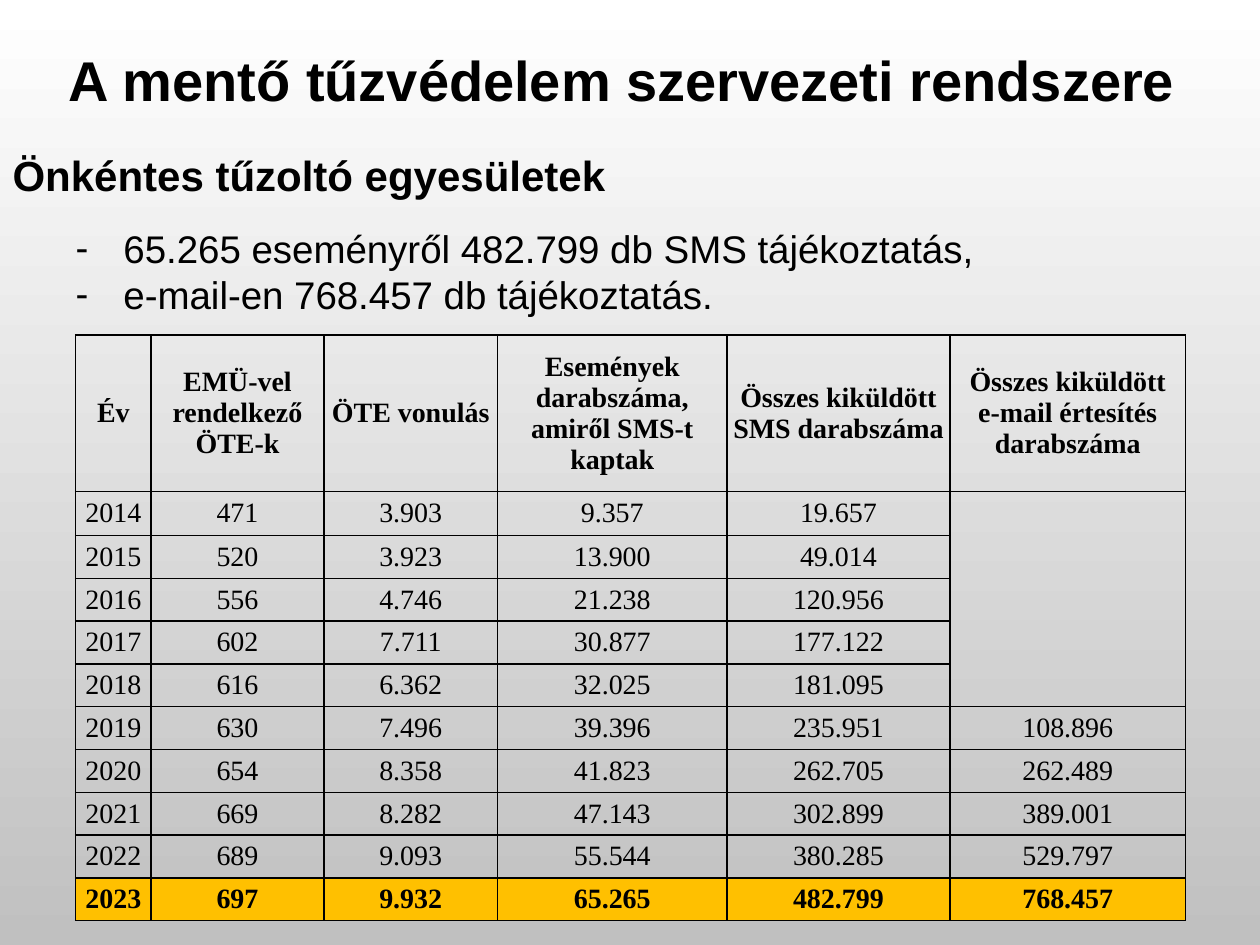
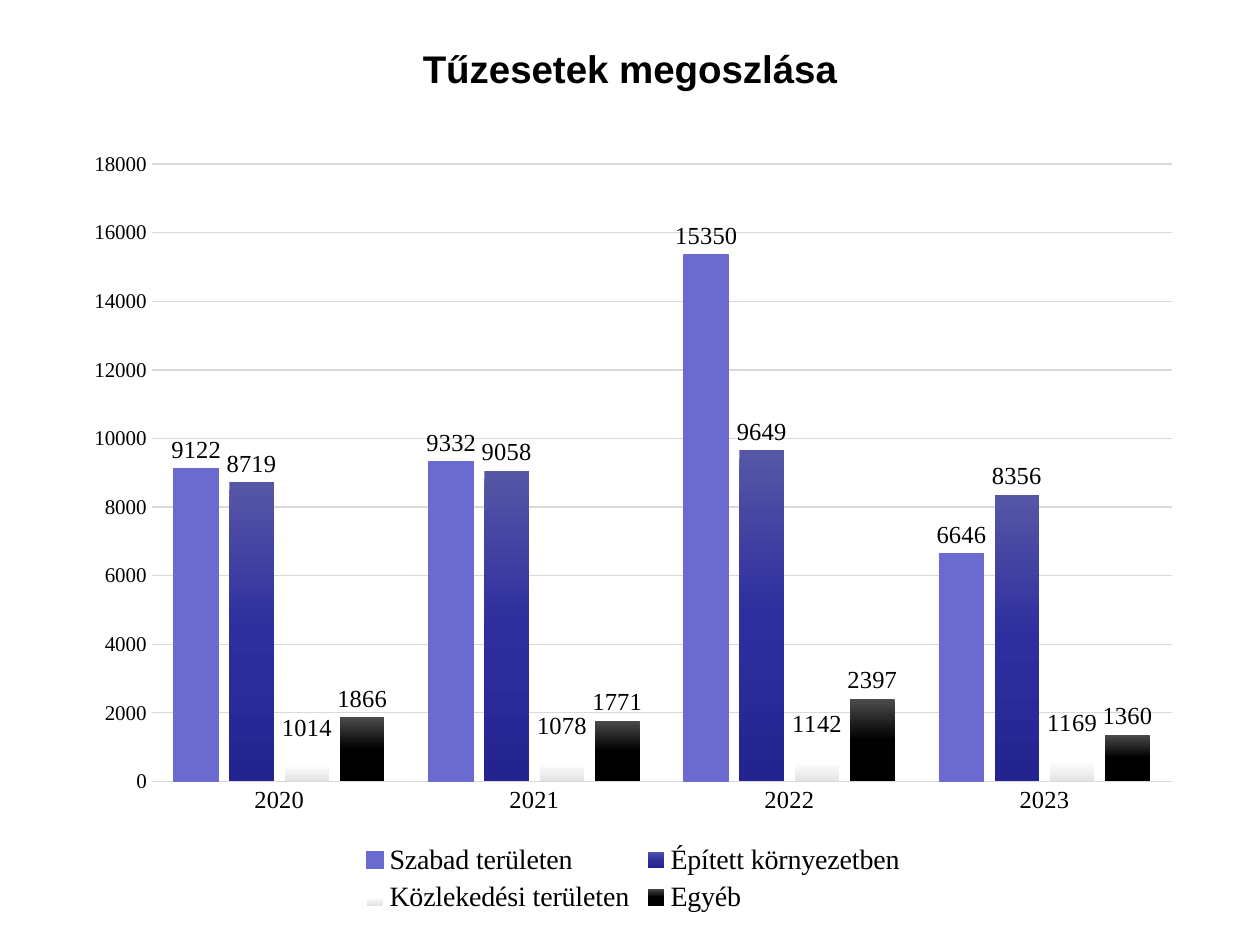
from copy import deepcopy

from lxml.etree import SubElement
from pptx import Presentation
from pptx.chart.data import CategoryChartData
from pptx.dml.color import RGBColor
from pptx.enum.chart import XL_CHART_TYPE, XL_LABEL_POSITION, XL_LEGEND_POSITION, XL_TICK_MARK
from pptx.enum.text import MSO_ANCHOR, MSO_AUTO_SIZE, PP_ALIGN
from pptx.oxml.ns import qn
from pptx.util import Inches, Pt

BLACK = "000000"
WHITE = "FFFFFF"
GRID_GREY = "D9D9D9"
HIGHLIGHT = "FFC000"
HEADING_FONT = "Arial"
DATA_FONT = "Times New Roman"
HANGING = 0.38

COLUMN_WIDTHS = [0.6, 1.37, 1.38, 1.82, 1.77, 1.87]
ROW_HEIGHTS = [1.24, 0.35] + [0.34] * 9
MESSAGE_ROWS = [
    ["Év", "EMÜ-vel rendelkező ÖTE-k", "ÖTE vonulás",
     "Események darabszáma, amiről SMS-t kaptak",
     "Összes kiküldött SMS darabszáma",
     "Összes kiküldött e-mail értesítés darabszáma"],
    ["2014", "471", "3.903", "9.357", "19.657", ""],
    ["2015", "520", "3.923", "13.900", "49.014", ""],
    ["2016", "556", "4.746", "21.238", "120.956", ""],
    ["2017", "602", "7.711", "30.877", "177.122", ""],
    ["2018", "616", "6.362", "32.025", "181.095", ""],
    ["2019", "630", "7.496", "39.396", "235.951", "108.896"],
    ["2020", "654", "8.358", "41.823", "262.705", "262.489"],
    ["2021", "669", "8.282", "47.143", "302.899", "389.001"],
    ["2022", "689", "9.093", "55.544", "380.285", "529.797"],
    ["2023", "697", "9.932", "65.265", "482.799", "768.457"],
]
FIRE_YEARS = ["2020", "2021", "2022", "2023"]
FIRE_SERIES = [
    ("Szabad területen", [9122, 9332, 15350, 6646], ["6B6BCF"]),
    ("Épített környezetben", [8719, 9058, 9649, 8356], ["5656A6", "2E2E9E", "242491"]),
    ("Közlekedési területen", [1014, 1078, 1142, 1169], [WHITE, WHITE, "E3E3E3"]),
    ("Egyéb", [1866, 1771, 2397, 1360], ["4B4B4B", BLACK, BLACK]),
]


def colour(hex_code):
    """Turn a hex string into a colour."""
    return RGBColor.from_string(hex_code)


def paint(fill, hex_codes):
    """Fill with one colour, or with an even gradient from top to bottom."""
    if len(hex_codes) == 1:
        fill.solid()
        fill.fore_color.rgb = colour(hex_codes[0])
        return
    fill.gradient()
    fill.gradient_angle = 270
    first_stop = fill.gradient_stops[0]._gs
    for _ in hex_codes[2:]:
        first_stop.addnext(deepcopy(first_stop))
    for index, (stop, hex_code) in enumerate(zip(fill.gradient_stops, hex_codes)):
        stop.position = index / (len(hex_codes) - 1)
        stop.color.rgb = colour(hex_code)


def set_font(font, size, name=DATA_FONT, bold=False):
    """Set a black font of the given size."""
    font.size = Pt(size)
    font.name = name
    font.bold = bold
    font.color.rgb = colour(BLACK)


def place(shape, box):
    """Move a shape to a box of left, top, width and height."""
    shape.left, shape.top, shape.width, shape.height = map(Inches, box)


def prepare_text(shape, box):
    """Place a text placeholder and start its text at the top."""
    place(shape, box)
    text_frame = shape.text_frame
    text_frame.word_wrap = True
    text_frame.auto_size = MSO_AUTO_SIZE.NONE
    text_frame.vertical_anchor = MSO_ANCHOR.TOP
    return text_frame


def set_indent(paragraph, left, first_line):
    """Set the left margin and first-line indent of a paragraph."""
    properties = paragraph._p.get_or_add_pPr()
    properties.set("marL", str(Inches(left)))
    properties.set("indent", str(Inches(first_line)))
    return properties


def add_slide(presentation, layout_index, background, title, size, title_height):
    """Add a slide with its background and centred title."""
    slide = presentation.slides.add_slide(presentation.slide_layouts[layout_index])
    paint(slide.background.fill, background)
    text_frame = prepare_text(slide.shapes.title, (0, 0.31, 10, title_height))
    text_frame.text = title
    paragraph = text_frame.paragraphs[0]
    paragraph.alignment = PP_ALIGN.CENTER
    set_indent(paragraph, HANGING, -HANGING)
    set_font(paragraph.runs[0].font, size, HEADING_FONT, True)
    return slide


def fill_body(shape, box, heading, items):
    """Write a bold heading followed by a dashed list."""
    text_frame = prepare_text(shape, box)
    text_frame.text = "\n".join([heading, *items])
    for index, paragraph in enumerate(text_frame.paragraphs):
        is_heading = index == 0
        paragraph.space_before = Pt(14 if index == 1 else 0)
        set_font(paragraph.runs[0].font, 24 if is_heading else 22, HEADING_FONT, is_heading)
        if is_heading:
            SubElement(set_indent(paragraph, 0, 0), qn("a:buNone"))
        else:
            paragraph.level = 1
            properties = set_indent(paragraph, 0.88, -HANGING)
            SubElement(properties, qn("a:buFont"), typeface=HEADING_FONT)
            SubElement(properties, qn("a:buChar"), char="-")


def add_borders(cell):
    """Draw a thin black line on all four sides of a cell."""
    properties = cell._tc.get_or_add_tcPr()
    for side in ("a:lnL", "a:lnR", "a:lnT", "a:lnB"):
        line = SubElement(properties, qn(side), w=str(Pt(1)))
        line_fill = SubElement(line, qn("a:solidFill"))
        SubElement(line_fill, qn("a:srgbClr"), val=BLACK)


def format_cell(cell, text, bold, highlighted):
    """Write a centred, bordered table cell."""
    cell.margin_left = cell.margin_right = Inches(0.05)
    cell.margin_top = cell.margin_bottom = 0
    cell.vertical_anchor = MSO_ANCHOR.MIDDLE
    add_borders(cell)
    if highlighted:
        paint(cell.fill, [HIGHLIGHT])
    else:
        cell.fill.background()
    cell.text = text
    paragraph = cell.text_frame.paragraphs[0]
    paragraph.alignment = PP_ALIGN.CENTER
    for run in paragraph.runs:
        set_font(run.font, 16, bold=bold)


def add_message_table(slide, box):
    """Add the yearly table of turnouts and messages."""
    table = slide.shapes.add_table(
        len(MESSAGE_ROWS), len(COLUMN_WIDTHS), *map(Inches, box)).table
    table.first_row = table.horz_banding = False
    for column, width in zip(table.columns, COLUMN_WIDTHS):
        column.width = Inches(width)
    for row, height in zip(table.rows, ROW_HEIGHTS):
        row.height = Inches(height)
    last = len(MESSAGE_ROWS) - 1
    for row_index, texts in enumerate(MESSAGE_ROWS):
        for column_index, text in enumerate(texts):
            format_cell(table.cell(row_index, column_index), text,
                        row_index in (0, last), row_index == last)
    table.cell(1, 5).merge(table.cell(5, 5))


def format_axes(chart):
    """Set the scale, lines and fonts of both axes."""
    for axis, size in ((chart.category_axis, 14), (chart.value_axis, 12)):
        axis.major_tick_mark = axis.minor_tick_mark = XL_TICK_MARK.NONE
        set_font(axis.tick_labels.font, size)
    value_axis = chart.value_axis
    value_axis.minimum_scale, value_axis.maximum_scale = 0, 18000
    value_axis.major_unit = 2000
    value_axis.has_major_gridlines = True
    value_axis.format.line.fill.background()
    for line in (chart.category_axis.format.line, value_axis.major_gridlines.format.line):
        line.width = Pt(0.75)
        paint(line.fill, [GRID_GREY])


def format_series(series, colours):
    """Colour a series and put its values above the columns."""
    paint(series.format.fill, colours)
    if len(colours) == 1:
        series.format.line.width = Pt(0.75)
        paint(series.format.line.fill, colours)
    else:
        series.format.line.fill.background()
    labels = series.data_labels
    labels.show_value = True
    labels.position = XL_LABEL_POSITION.OUTSIDE_END
    set_font(labels.font, 14)


def add_fire_chart(slide, box):
    """Add the clustered column chart of fires by place."""
    chart_data = CategoryChartData()
    chart_data.categories = FIRE_YEARS
    for name, values, _ in FIRE_SERIES:
        chart_data.add_series(name, values)
    chart = slide.shapes.add_chart(
        XL_CHART_TYPE.COLUMN_CLUSTERED, *map(Inches, box), chart_data).chart
    set_font(chart.font, 10)
    chart.has_title = False
    chart.has_legend = True
    chart.legend.position = XL_LEGEND_POSITION.BOTTOM
    chart.legend.include_in_layout = False
    set_font(chart.legend.font, 16)
    plot = chart.plots[0]
    plot.gap_width, plot.overlap = 100, -24
    plot.vary_by_categories = False
    format_axes(chart)
    for series, (_, _, colours) in zip(plot.series, FIRE_SERIES):
        format_series(series, colours)


def main():
    """Build both slides and save the presentation."""
    presentation = Presentation()
    presentation.slide_width, presentation.slide_height = Inches(10), Inches(7.5)

    messages = add_slide(presentation, 1, [WHITE, "C0C0C0"],
                         "A mentő tűzvédelem szervezeti rendszere ", 32, 0.64)
    fill_body(messages.placeholders[1], (0, 1.14, 10, 1.45),
              "Önkéntes tűzoltó egyesületek",
              ["65.265 eseményről 482.799 db SMS tájékoztatás,",
               "e-mail-en 768.457 db tájékoztatás."])
    add_message_table(messages, (0.6, 2.66, 8.81, 4.64))

    fires = add_slide(presentation, 5, [WHITE], "Tűzesetek megoszlása", 22, 0.47)
    add_fire_chart(fires, (0.57, 1.09, 8.91, 6.2))

    presentation.save("out.pptx")


if __name__ == "__main__":
    main()
